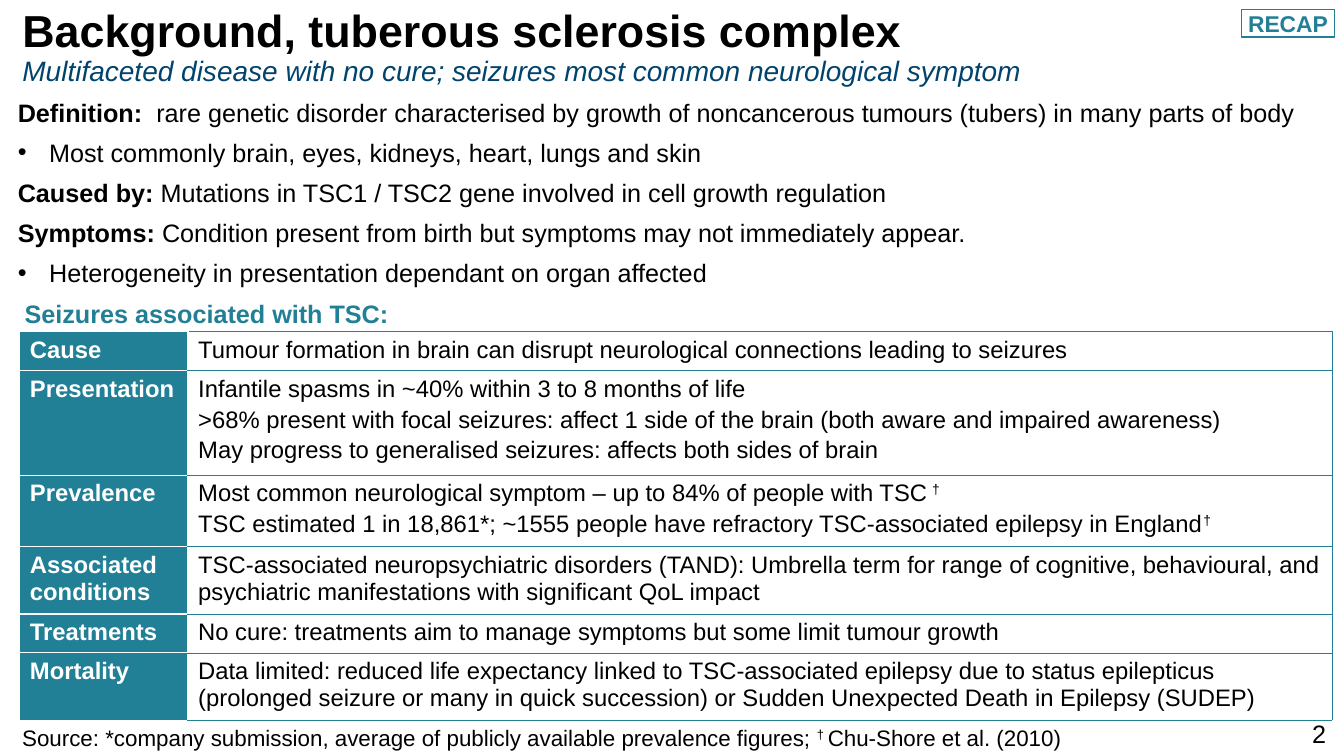
from dataclasses import dataclass

import lxml.etree
import pptx
import pptx.dml.color
import pptx.enum.shapes
import pptx.enum.text
import pptx.oxml.ns
import pptx.util

Cm = pptx.util.Cm
Pt = pptx.util.Pt
ALIGN = pptx.enum.text.PP_ALIGN
COLOURS = {"black": "000000", "white": "FFFFFF", "teal": "228096", "navy": "00436C"}


@dataclass(frozen=True)
class Run:
    text: str
    bold: bool = False
    italic: bool = False
    raised: bool = False
    size: float | None = None
    colour: str | None = None


@dataclass(frozen=True)
class Line:
    runs: tuple[Run, ...]
    bullet: bool = False
    indent: float = 0


@dataclass(frozen=True)
class TopicRow:
    label: str
    lines: tuple[Line, ...]
    height: float


def plain(text: str) -> Line:
    return Line((Run(text),))


def headed(heading: str, text: str) -> Line:
    return Line((Run(heading, bold=True), Run(text)))


TITLE = (
    Line((Run("Background, tuberous sclerosis complex", bold=True, size=32),)),
    Line((Run("Multifaceted disease with no cure; seizures most common neurological symptom",
              italic=True, colour="navy"),)),
)
OVERVIEW = (
    headed("Definition:", "  rare genetic disorder characterised by growth of "
           "noncancerous tumours (tubers) in many parts of body"),
    Line((Run("Most commonly brain, eyes, kidneys, heart, lungs and skin"),), bullet=True),
    headed("Caused by: ", "Mutations in TSC1 / TSC2 gene involved in cell growth regulation"),
    headed("Symptoms: ", "Condition present from birth but symptoms may not immediately appear."),
    Line((Run("Heterogeneity in presentation dependant on organ affected"),), bullet=True),
    Line((Run("Seizures associated with TSC:", bold=True, colour="teal"),), indent=0.17),
)
TOPICS = (
    TopicRow("Cause", (plain("Tumour formation in brain can disrupt neurological "
                             "connections leading to seizures"),), 0.97),
    TopicRow("Presentation", (
        plain("Infantile spasms in ~40% within 3 to 8 months of life"),
        plain(">68% present with focal seizures: affect 1 side of the brain "
              "(both aware and impaired awareness)"),
        plain("May progress to generalised seizures: affects both sides of brain"),
    ), 2.64),
    TopicRow("Prevalence", (
        Line((Run("Most common neurological symptom – up to 84% of people with TSC"),
              Run(" †", raised=True))),
        Line((Run("TSC estimated 1 in 18,861*; ~1555 people have refractory "
                  "TSC-associated epilepsy in England"), Run("†", raised=True))),
    ), 1.79),
    TopicRow("Associated conditions", (
        plain("TSC-associated neuropsychiatric disorders (TAND): Umbrella term for range of "
              "cognitive, behavioural, and psychiatric manifestations with significant "
              "QoL impact"),), 1.69),
    TopicRow("Treatments", (plain("No cure: treatments aim to manage symptoms but some "
                                  "limit tumour growth"),), 0.98),
    TopicRow("Mortality", (
        plain("Data limited: reduced life expectancy linked to TSC-associated epilepsy due to "
              "status epilepticus (prolonged seizure or many in quick succession) or Sudden "
              "Unexpected Death in Epilepsy (SUDEP)"),), 1.68),
)
SOURCE = Line((
    Run("Source: *company submission, average of publicly available prevalence figures; "),
    Run("† ", raised=True),
    Run("Chu-Shore et al. (2010)"),
))


def rgb(name: str) -> pptx.dml.color.RGBColor:
    return pptx.dml.color.RGBColor.from_string(COLOURS[name])


def add_child(parent, tag: str, **attributes: str):
    return lxml.etree.SubElement(parent, pptx.oxml.ns.qn(tag), attributes)


def write_text(frame, lines: tuple[Line, ...], *, size: float, colour: str = "black",
               spacing: float = 1.0, before: float = 0, after: float = 0,
               align=ALIGN.LEFT) -> None:
    frame.word_wrap = True
    for index, line in enumerate(lines):
        paragraph = frame.add_paragraph() if index else frame.paragraphs[0]
        paragraph.alignment = align
        paragraph.line_spacing = spacing
        paragraph.space_before, paragraph.space_after = Pt(before), Pt(after)
        properties = paragraph._p.get_or_add_pPr()
        if line.bullet:
            properties.set("marL", str(Cm(0.79)))
            properties.set("indent", str(Cm(-0.79)))
            add_child(properties, "a:buFont", typeface="Arial")
            add_child(properties, "a:buChar", char="•")
        elif line.indent:
            properties.set("marL", str(Cm(line.indent)))
        for piece in line.runs:
            run = paragraph.add_run()
            run.text = piece.text
            run.font.name = "Arial"
            run.font.size = Pt(piece.size or size)
            run.font.bold, run.font.italic = piece.bold, piece.italic
            run.font.color.rgb = rgb(piece.colour or colour)
            if piece.raised:
                run.font._element.set("baseline", "30000")


def add_text_box(slide, place: tuple[float, ...], lines: tuple[Line, ...], **style) -> None:
    box = slide.shapes.add_textbox(*map(Cm, place))
    write_text(box.text_frame, lines, **style)


def set_borders(cell, outline: str, left: str, width: float) -> None:
    properties = cell._tc.get_or_add_tcPr()
    edges = (("a:lnL", left, 1), ("a:lnR", outline, width),
             ("a:lnT", outline, width), ("a:lnB", outline, width))
    for position, (tag, colour, points) in enumerate(edges):
        edge = add_child(properties, tag, w=str(Pt(points)))
        add_child(add_child(edge, "a:solidFill"), "a:srgbClr", val=COLOURS[colour])
        properties.insert(position, edge)


def add_topics(slide) -> None:
    widths = (4.24, 28.83)
    height = sum(topic.height for topic in TOPICS)
    topics = slide.shapes.add_table(len(TOPICS), 2, Cm(0.5), Cm(8.36),
                                    Cm(sum(widths)), Cm(height)).table
    topics.first_row = topics.horz_banding = False
    for column, width in zip(topics.columns, widths):
        column.width = Cm(width)
    for row, topic in zip(topics.rows, TOPICS):
        row.height = Cm(topic.height)
        label, detail = row.cells
        label.fill.solid()
        label.fill.fore_color.rgb = rgb("teal")
        detail.fill.background()
        heading = Line((Run(topic.label, bold=True),))
        write_text(label.text_frame, (heading,), size=17, colour="white", before=1, after=2)
        write_text(detail.text_frame, topic.lines, size=17, before=1, after=2)
        set_borders(label, outline="white", left="white", width=1)
        set_borders(detail, outline="teal", left="white", width=0.5)


def add_badge(slide) -> None:
    badge = slide.shapes.add_shape(pptx.enum.shapes.MSO_SHAPE.RECTANGLE,
                                   Cm(31.29), Cm(0.24), Cm(2.34), Cm(0.69))
    badge.shadow.inherit = False
    badge.fill.solid()
    badge.fill.fore_color.rgb = rgb("white")
    badge.line.color.rgb = rgb("teal")
    badge.line.width = Pt(1)
    frame = badge.text_frame
    frame.margin_left = frame.margin_right = frame.margin_top = frame.margin_bottom = 0
    write_text(frame, (Line((Run("RECAP", bold=True),)),), size=16.3, colour="teal",
               align=ALIGN.CENTER)


def main() -> None:
    deck = pptx.Presentation()
    deck.slide_width, deck.slide_height = Cm(33.87), Cm(19.05)
    slide = deck.slides.add_slide(deck.slide_layouts[5])

    # Title and subtitle
    title = slide.shapes.title
    title.left, title.top, title.width, title.height = map(Cm, (0.31, 0.1, 31.04, 3.05))
    title.text_frame.vertical_anchor = pptx.enum.text.MSO_ANCHOR.TOP
    title.text_frame.auto_size = pptx.enum.text.MSO_AUTO_SIZE.NONE
    write_text(title.text_frame, TITLE, size=20, spacing=0.9)

    # Disease overview
    add_text_box(slide, (0.2, 2.24, 33.25, 6.1), OVERVIEW, size=18, spacing=1.1, after=5)

    # Seizure topics
    add_topics(slide)

    # Source, page number and badge
    add_text_box(slide, (0.31, 18.12, 33.25, 0.94), (SOURCE,), size=16)
    add_text_box(slide, (32.82, 17.98, 1.4, 0.91), (plain("2"),), size=18)
    add_badge(slide)

    deck.save("out.pptx")


if __name__ == "__main__":
    main()
